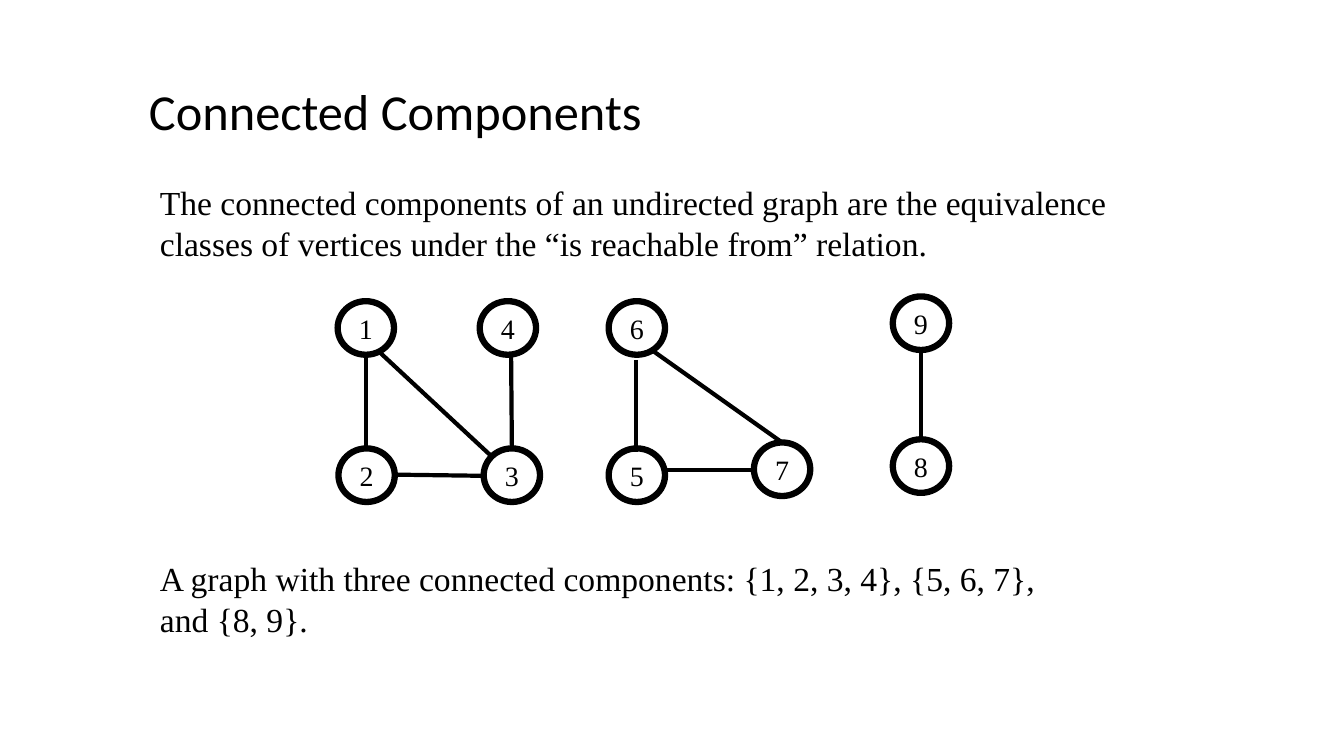
"""Build a slide on the connected components of an undirected graph."""
from lxml.etree import SubElement
from pptx import Presentation
from pptx.dml.color import RGBColor
from pptx.enum.shapes import MSO_CONNECTOR, MSO_SHAPE
from pptx.enum.text import MSO_ANCHOR, MSO_AUTO_SIZE, PP_ALIGN
from pptx.oxml.ns import qn
from pptx.util import Cm, Pt

BLACK = "000000"
WHITE = "FFFFFF"
SERIF = "Times New Roman"
NODE_WIDTH, NODE_HEIGHT = 1.42, 1.35
TOP_ROW, BOTTOM_ROW = 7.59, 11.3

NODES = {
    "1": (8.51, TOP_ROW),
    "4": (12.09, TOP_ROW),
    "3": (12.19, BOTTOM_ROW),
    "2": (8.53, BOTTOM_ROW),
    "6": (15.34, TOP_ROW),
    "5": (15.34, BOTTOM_ROW),
    "7": (19, 11.15),
    "8": (22.5, 11.07),
    "9": (22.5, 7.47),
}
EDGES = [
    (9.22, 8.94, 9.22, 11.3),
    (12.88, 8.94, 12.9, 11.3),
    (16.03, 9.07, 16.03, 11.4),
    (23.22, 8.81, 23.22, 11.15),
    (16.41, 8.81, 19.71, 11.15),
    (9.55, 8.86, 12.4, 11.51),
    (9.93, 11.96, 12.19, 11.99),
    (16.79, 11.84, 19.05, 11.84),
]


def colour(value):
    return RGBColor.from_string(value)


def write_text(shape, text, size, font, align=PP_ALIGN.LEFT):
    frame = shape.text_frame
    frame.text = text
    for para in frame.paragraphs:
        para.alignment = align
        for span in para.runs:
            span.font.size = Pt(size)
            span.font.name = font
            span.font.color.rgb = colour(BLACK)
    return frame


def place_title(page, text):
    title = page.shapes.title
    title.left, title.top, title.width, title.height = Cm(3.5), Cm(1.9), Cm(13.06), Cm(1.8)
    frame = write_text(title, text, 36, "Calibri")
    frame.vertical_anchor = MSO_ANCHOR.TOP
    frame.auto_size = MSO_AUTO_SIZE.NONE
    frame.word_wrap = False


def add_text(page, text, top, width):
    box = page.shapes.add_textbox(Cm(3.78), Cm(top), Cm(width), Cm(2.31))
    frame = write_text(box, text, 24, SERIF)
    frame.word_wrap = True


def add_node(page, label, left, top):
    node = page.shapes.add_shape(
        MSO_SHAPE.OVAL, Cm(left), Cm(top), Cm(NODE_WIDTH), Cm(NODE_HEIGHT))
    node.shadow.inherit = False
    node.fill.solid()
    node.fill.fore_color.rgb = colour(WHITE)
    node.line.color.rgb = colour(BLACK)
    node.line.width = Pt(4.5)
    frame = write_text(node, label, 20, SERIF, PP_ALIGN.CENTER)
    frame.vertical_anchor = MSO_ANCHOR.MIDDLE


def add_edge(page, *ends):
    edge = page.shapes.add_connector(MSO_CONNECTOR.STRAIGHT, *map(Cm, ends))
    edge.line.color.rgb = colour(BLACK)
    edge.line.width = Pt(3)
    SubElement(edge._element.spPr, qn("a:effectLst"))


def main():
    deck = Presentation()
    deck.slide_width, deck.slide_height = Cm(33.87), Cm(19.05)
    page = deck.slides.add_slide(deck.slide_layouts.get_by_name("Title Only"))
    place_title(page, "Connected Components")
    add_text(page, "The connected components of an undirected graph are the equivalence "
             "classes of vertices under the “is reachable from” relation.", 4.47, 25.96)
    add_text(page, "A graph with three connected components: {1, 2, 3, 4}, {5, 6, 7},\n"
             "and {8, 9}.", 13.94, 24.21)
    for label, (left, top) in NODES.items():
        add_node(page, label, left, top)
    for ends in EDGES:
        add_edge(page, *ends)
    deck.save("out.pptx")


if __name__ == "__main__":
    main()
